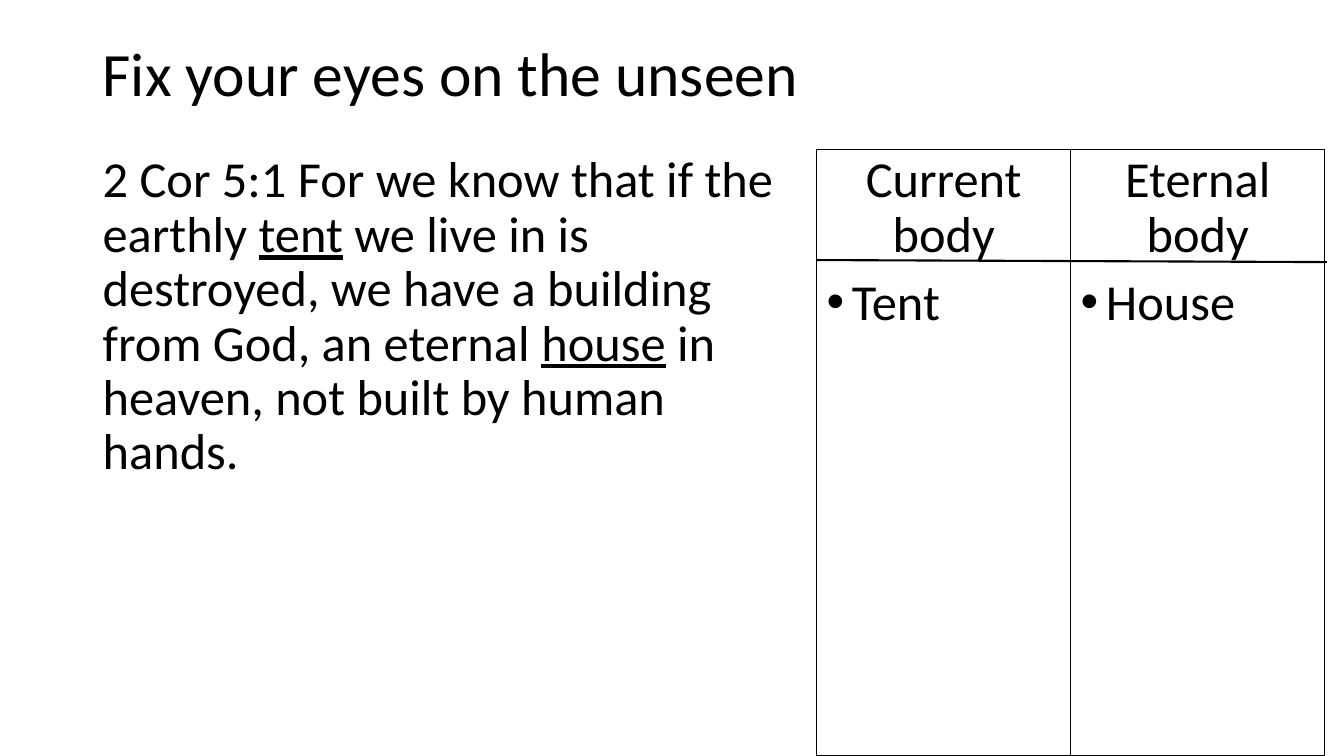
from dataclasses import dataclass

from lxml.etree import SubElement
from pptx import Presentation
from pptx.dml.color import RGBColor
from pptx.enum.shapes import MSO_CONNECTOR as Connector, MSO_SHAPE as Shape
from pptx.enum.text import MSO_ANCHOR as Anchor, PP_ALIGN as Align
from pptx.oxml.ns import qn
from pptx.util import Inches, Pt

COLORS = {"ink": "000000"}
FONT = "Calibri"
SLIDE_WIDTH, SLIDE_HEIGHT = 13.33, 7.5
MARGIN = 0.92
TITLE_TOP, TITLE_WIDTH, TITLE_HEIGHT = 0.03, 11.5, 1.45
BODY_TOP = TITLE_TOP + TITLE_HEIGHT
BODY_HEIGHT = SLIDE_HEIGHT - BODY_TOP
TABLE_LEFT, COLUMN_WIDTH = 8.1, 2.52
RULE_START, RULE_END = (TABLE_LEFT, 2.58), (13.16, 2.6)


@dataclass(frozen=True)
class Run:
    text: str
    underline: bool = False


@dataclass(frozen=True)
class BodyColumn:
    heading: str
    item: str


VERSE = (
    Run("2 Cor 5:1 For we know that if the earthly "),
    Run("tent", underline=True),
    Run(" we live in is destroyed, we have a building from God, an eternal "),
    Run("house", underline=True),
    Run(" in heaven, not built by human hands."),
)
BODY_COLUMNS = (
    BodyColumn("Current body", "Tent"),
    BodyColumn("Eternal body", "House"),
)


def ink() -> RGBColor:
    return RGBColor.from_string(COLORS["ink"])


def box(left: float, top: float, width: float, height: float) -> tuple:
    return tuple(Inches(length) for length in (left, top, width, height))


def write(paragraph, *runs: Run, size: float = 36, align=Align.LEFT,
          before: float = 10, bullet: bool = False) -> None:
    paragraph.alignment = align
    paragraph.line_spacing = 0.9
    paragraph.space_before = Pt(before)
    for part in runs:
        run = paragraph.add_run()
        run.text = part.text
        font = run.font
        font.name, font.size = FONT, Pt(size)
        font.underline = part.underline
        font.color.rgb = ink()
    if bullet:
        properties = paragraph._p.get_or_add_pPr()
        properties.set("marL", str(Inches(0.25)))
        properties.set("indent", str(Inches(-0.25)))
        SubElement(properties, qn("a:buFont"), typeface="Arial")
        SubElement(properties, qn("a:buChar"), char="•")


def add_text_frame(slide, bounds: tuple, anchor=Anchor.TOP):
    frame = slide.shapes.add_textbox(*bounds).text_frame
    frame.word_wrap = True
    frame.vertical_anchor = anchor
    return frame


def add_body_column(slide, index: int, column: BodyColumn) -> None:
    left = TABLE_LEFT + index * COLUMN_WIDTH
    shape = slide.shapes.add_shape(
        Shape.RECTANGLE, *box(left, BODY_TOP, COLUMN_WIDTH, BODY_HEIGHT))
    shape.shadow.inherit = False
    shape.fill.background()
    shape.line.color.rgb = ink()
    shape.line.width = Pt(0.75)
    frame = shape.text_frame
    frame.word_wrap = True
    frame.vertical_anchor = Anchor.TOP
    write(frame.paragraphs[0], Run(column.heading), align=Align.CENTER)
    write(frame.add_paragraph(), Run(column.item), bullet=True)


def add_heading_rule(slide) -> None:
    ends = (Inches(length) for length in RULE_START + RULE_END)
    rule = slide.shapes.add_connector(Connector.STRAIGHT, *ends)
    rule.line.color.rgb = ink()
    rule.line.width = Pt(1.5)
    SubElement(rule._element.spPr, qn("a:effectLst"))


def main() -> None:
    presentation = Presentation()
    presentation.slide_width = Inches(SLIDE_WIDTH)
    presentation.slide_height = Inches(SLIDE_HEIGHT)
    slide = presentation.slides.add_slide(presentation.slide_layouts[6])

    title = add_text_frame(
        slide, box(MARGIN, TITLE_TOP, TITLE_WIDTH, TITLE_HEIGHT), Anchor.MIDDLE)
    write(title.paragraphs[0], Run("Fix your eyes on the unseen"), size=44, before=0)

    verse = add_text_frame(
        slide, box(MARGIN, BODY_TOP, TABLE_LEFT - MARGIN, BODY_HEIGHT))
    write(verse.paragraphs[0], *VERSE)

    for index, column in enumerate(BODY_COLUMNS):
        add_body_column(slide, index, column)
    add_heading_rule(slide)
    presentation.save("out.pptx")


if __name__ == "__main__":
    main()
